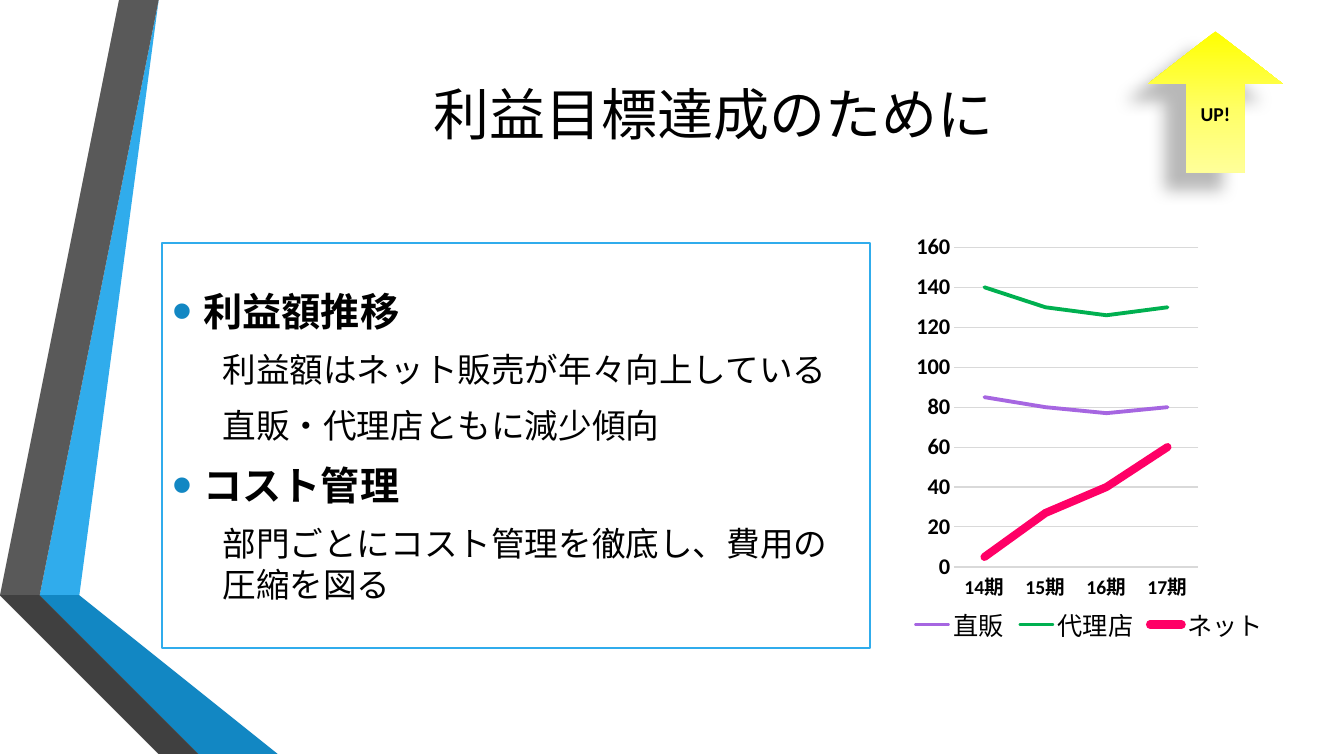
from pptx import Presentation
from pptx.chart.data import CategoryChartData
from pptx.dml.color import RGBColor
from pptx.enum.chart import XL_CHART_TYPE, XL_LEGEND_POSITION, XL_MARKER_STYLE, XL_TICK_MARK
from pptx.enum.shapes import MSO_SHAPE
from pptx.enum.text import MSO_ANCHOR, PP_ALIGN
from pptx.oxml import parse_xml
from pptx.oxml.ns import nsdecls, qn
from pptx.util import Cm, Pt

LATIN_FONT = "Calibri"
JAPANESE_FONT = "Noto Sans CJK JP"
BLACK, WHITE, GRID_GRAY = "000000", "FFFFFF", "D9D9D9"
SKY, BLUE = "30ACEC", "1287C3"

RIBBONS = [
    (SKY, [(1.27, 14.68), (1.96, 14.81), (4.39, 0), (3.68, 0)]),
    ("595959", [(3.53, 0), (2.82, 0), (0.41, 14.55), (1.12, 14.66)]),
    ("262626", [(0.41, 14.55), (3.68, 19.05), (3.84, 19.05)]),
    ("0C5A82", [(1.27, 14.71), (5.28, 19.05), (5.44, 19.05)]),
    (BLUE, [(1.27, 14.68), (5.44, 19.05), (7.19, 19.05), (1.96, 14.81)]),
    ("404040", [(5.13, 19.05), (1.22, 14.81), (1.12, 14.66), (0.41, 14.55), (3.84, 19.05)]),
]

TOPICS = [
    ("利益額推移", ["利益額はネット販売が年々向上している", "直販・代理店ともに減少傾向"]),
    ("コスト管理", ["部門ごとにコスト管理を徹底し、費用の圧縮を図る"]),
]

PERIODS = ["14期", "15期", "16期", "17期"]
CHANNELS = [
    ("直販", [85, 80, 77, 80], "A666E1", 2.75),
    ("代理店", [140, 130, 126, 130], "00B050", 2.75),
    ("ネット", [5, 27, 40, 60], "FF0066", 5.75),
]


def color(hex_text):
    return RGBColor.from_string(hex_text)


def style_font(font, size, bold=False, name=LATIN_FONT):
    font.name = name
    font.size = Pt(size)
    font.bold = bold
    font.color.rgb = color(BLACK)


def add_run(paragraph, text, size, bold=False, name=LATIN_FONT):
    """Add a run whose Latin and East Asian fonts are the same."""
    run = paragraph.add_run()
    run.text = text
    style_font(run.font, size, bold, name)
    latin = run.font._element.find(qn("a:latin"))
    latin.addnext(parse_xml(f'<a:ea {nsdecls("a")} typeface="{name}"/>'))


def add_ribbon(slide, fill, points):
    builder = slide.shapes.build_freeform(*points[0], scale=float(Cm(1)))
    builder.add_line_segments(points[1:], close=True)
    shape = builder.convert_to_shape()
    shape.shadow.inherit = False
    shape.fill.solid()
    shape.fill.fore_color.rgb = color(fill)
    shape.line.fill.background()


def add_title(slide, text):
    box = slide.shapes.add_textbox(Cm(4.06), Cm(0.41), Cm(27.84), Cm(4.88))
    frame = box.text_frame
    frame.word_wrap = True
    frame.vertical_anchor = MSO_ANCHOR.MIDDLE
    paragraph = frame.paragraphs[0]
    paragraph.alignment = PP_ALIGN.CENTER
    add_run(paragraph, text, 40, name=JAPANESE_FONT)


def add_up_arrow(slide, text):
    shape = slide.shapes.add_shape(
        MSO_SHAPE.UP_ARROW, Cm(28.93), Cm(0.79), Cm(3.4), Cm(3.56))
    shape.adjustments[0] = 0.43
    shape.adjustments[1] = 0.39
    shape.line.fill.background()
    stops = "".join(
        f'<a:gs pos="{percent * 1000}"><a:srgbClr val="{shade}"/></a:gs>'
        for percent, shade in [(0, "FFFF00"), (56, "FFFF66"), (100, "FFFF99")])
    properties = shape._element.spPr
    properties.find(qn("a:prstGeom")).addnext(parse_xml(
        f'<a:gradFill {nsdecls("a")} rotWithShape="1"><a:gsLst>{stops}</a:gsLst>'
        '<a:lin ang="5400000" scaled="0"/></a:gradFill>'))
    properties.append(parse_xml(
        f'<a:effectLst {nsdecls("a")}><a:outerShdw blurRad="{Pt(11.8)}" '
        f'dist="{Pt(19.7)}" dir="{141 * 60000}" algn="ctr" rotWithShape="0">'
        f'<a:srgbClr val="{BLACK}"><a:alpha val="28000"/></a:srgbClr>'
        '</a:outerShdw></a:effectLst>'))
    frame = shape.text_frame
    frame.vertical_anchor = MSO_ANCHOR.MIDDLE
    paragraph = frame.paragraphs[0]
    paragraph.alignment = PP_ALIGN.CENTER
    add_run(paragraph, text, 14, bold=True)


def set_indent(paragraph, left, first_line=0):
    properties = paragraph._element.get_or_add_pPr()
    properties.set("marL", str(Cm(left)))
    properties.set("indent", str(Cm(first_line)))


def add_bullet(paragraph):
    properties = paragraph._element.get_or_add_pPr()
    for element in (
        f'<a:buClr {nsdecls("a")}><a:srgbClr val="{BLUE}"/></a:buClr>',
        f'<a:buSzPct {nsdecls("a")} val="145000"/>',
        f'<a:buFont {nsdecls("a")} typeface="Arial"/>',
        f'<a:buChar {nsdecls("a")} char="•"/>',
    ):
        properties.append(parse_xml(element))


def add_topics(slide, topics):
    shape = slide.shapes.add_shape(
        MSO_SHAPE.RECTANGLE, Cm(4.09), Cm(6.12), Cm(17.83), Cm(10.21))
    shape.shadow.inherit = False
    shape.fill.solid()
    shape.fill.fore_color.rgb = color(WHITE)
    shape.line.color.rgb = color(SKY)
    shape.line.width = Pt(1.25)
    frame = shape.text_frame
    frame.word_wrap = True
    frame.vertical_anchor = MSO_ANCHOR.MIDDLE
    lines = [(text, level) for heading, details in topics
             for text, level in [(heading, 0)] + [(detail, 1) for detail in details]]
    for number, (text, level) in enumerate(lines):
        paragraph = frame.add_paragraph() if number else frame.paragraphs[0]
        paragraph.alignment = PP_ALIGN.LEFT
        paragraph.level = level
        size = 24 if level else 28
        if level:
            set_indent(paragraph, 1.27)
        else:
            set_indent(paragraph, 0.79, -0.79)
            add_bullet(paragraph)
        if number:
            paragraph.space_before = Pt(size * 0.2)
        paragraph.space_after = Pt(6)
        add_run(paragraph, text, size, bold=not level)


def set_layout(element, **values):
    """Place a plot area or legend by fractions of the chart's size."""
    for old in element.findall(qn("c:layout")):
        element.remove(old)
    target = '<c:layoutTarget val="inner"/>' if "w" in values else ""
    modes = "".join(f'<c:{key}Mode val="edge"/>' for key in "xy")
    sizes = "".join(f'<c:{key} val="{value}"/>' for key, value in values.items())
    layout = parse_xml(
        f'<c:layout {nsdecls("c")}><c:manualLayout>{target}{modes}{sizes}'
        '</c:manualLayout></c:layout>')
    position = element.find(qn("c:legendPos"))
    if position is None:
        element.insert(0, layout)
    else:
        position.addnext(layout)


def style_axis(axis, size):
    axis.major_tick_mark = axis.minor_tick_mark = XL_TICK_MARK.NONE
    style_font(axis.tick_labels.font, size, bold=True)


def add_profit_chart(slide):
    data = CategoryChartData()
    data.categories = PERIODS
    for name, values, _, _ in CHANNELS:
        data.add_series(name, values)
    chart = slide.shapes.add_chart(
        XL_CHART_TYPE.LINE, Cm(21.95), Cm(5.59), Cm(11.61), Cm(10.74), data).chart
    chart.has_title = False
    style_font(chart.font, 10)
    chart.plots[0].vary_by_categories = False
    for series, (_, _, shade, width) in zip(chart.plots[0].series, CHANNELS):
        series.smooth = False
        series.marker.style = XL_MARKER_STYLE.NONE
        series.format.line.color.rgb = color(shade)
        series.format.line.width = Pt(width)
        series._element.xpath("c:spPr/a:ln")[0].set("cap", "rnd")

    style_axis(chart.category_axis, 14)
    chart.category_axis.format.line.color.rgb = color(GRID_GRAY)
    chart.category_axis.format.line.width = Pt(1)
    value_axis = chart.value_axis
    style_axis(value_axis, 16)
    value_axis.minimum_scale, value_axis.maximum_scale, value_axis.major_unit = 0, 160, 20
    value_axis.format.line.fill.background()
    value_axis.major_gridlines.format.line.color.rgb = color(GRID_GRAY)
    value_axis.major_gridlines.format.line.width = Pt(0.75)

    chart.has_legend = True
    chart.legend.position = XL_LEGEND_POSITION.BOTTOM
    chart.legend.include_in_layout = False
    style_font(chart.legend.font, 18)
    set_layout(chart.legend._element, x=0.08, y=0.89)
    set_layout(chart._chartSpace.chart.plotArea, x=0.18, y=0.06, w=0.53, h=0.75)


def main():
    presentation = Presentation()
    presentation.slide_width, presentation.slide_height = Cm(33.87), Cm(19.05)
    slide = presentation.slides.add_slide(presentation.slide_layouts[6])
    for fill, points in RIBBONS:
        add_ribbon(slide, fill, points)
    add_title(slide, "利益目標達成のために")
    add_up_arrow(slide, "UP!")
    add_topics(slide, TOPICS)
    add_profit_chart(slide)
    presentation.save("out.pptx")


if __name__ == "__main__":
    main()
